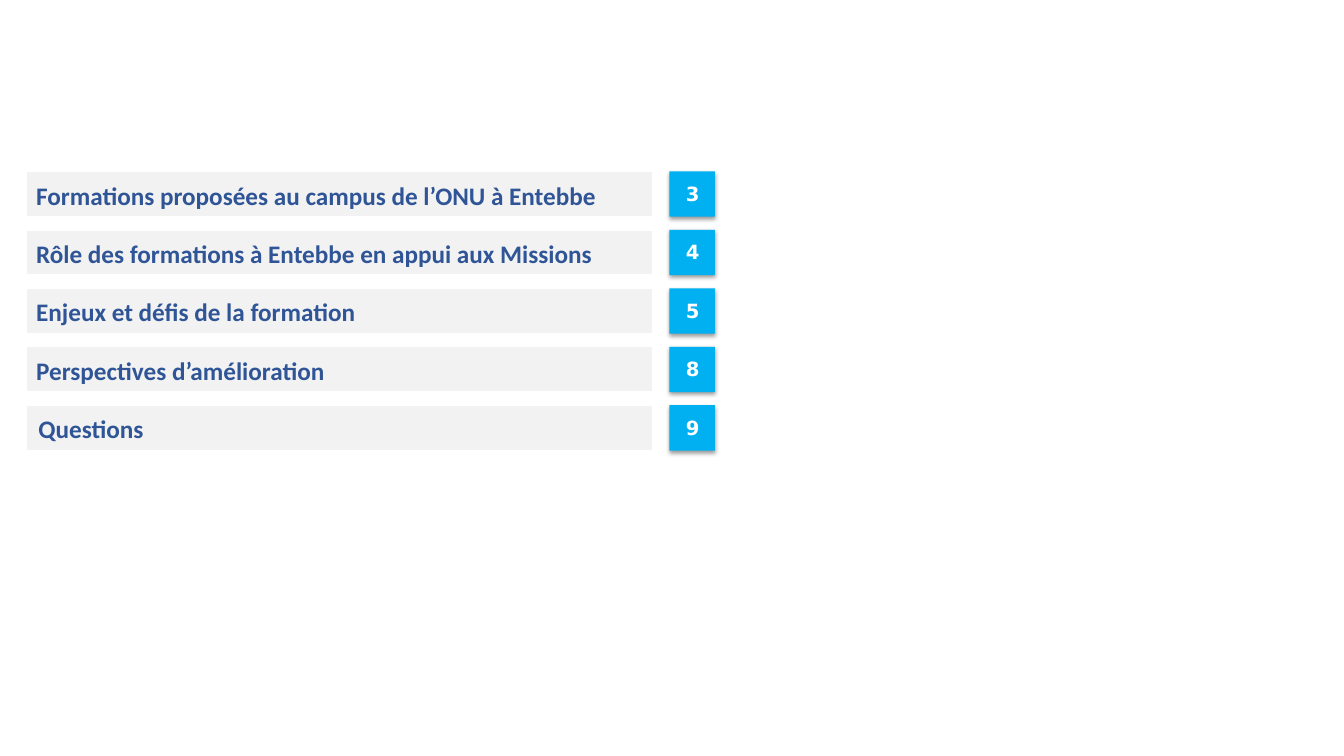
from lxml import etree
from pptx import Presentation
from pptx.dml.color import RGBColor
from pptx.enum import shapes, text
from pptx.oxml import parse_xml
from pptx.oxml.ns import nsdecls
from pptx.util import Inches, Pt

# Content: heading, page, left and right text insets
AGENDA = [
    ("Formations proposées au campus de l’ONU à Entebbe", "3", 0.1, 0.1),
    ("Rôle des formations à Entebbe en appui aux Missions", "4", 0.1, 0.1),
    ("Enjeux et défis de la formation", "5", 0.1, 0.1),
    ("Perspectives d’amélioration", "8", 0.1, 0.1),
    ("Questions", "9", 0.12, 0),
]

THEME = {
    "bar": "F2F2F2", "badge": "00B0F0", "heading": "2F5597", "white": "FFFFFF",
    "heading_font": "Calibri", "heading_size": 18,
    "page_font": "DejaVu Sans", "page_size": 14,
}

# Layout in inches
TOP, PITCH = 1.7, 0.58
BAR_LEFT, BAR_W, ROW_H = 0.26, 6.21, 0.45
BADGE_LEFT = 6.64
PAGE_LEFT, PAGE_DROP, PAGE_W, PAGE_H = 6.72, 0.1, 0.3, 0.24


def color(name):
    return RGBColor.from_string(THEME[name])


def add_rect(parent, left, top, width, height, fill):
    sp = parent.add_shape(shapes.MSO_SHAPE.RECTANGLE, Inches(left), Inches(top),
                          Inches(width), Inches(height))
    sp.shadow.inherit = False
    sp.fill.solid()
    sp.fill.fore_color.rgb = color(fill)
    sp.line.fill.background()
    return sp


def set_text(sp, words, style, ink, align, insets):
    tf = sp.text_frame
    tf.word_wrap = True
    tf.vertical_anchor = text.MSO_ANCHOR.MIDDLE
    (tf.margin_left, tf.margin_top,
     tf.margin_right, tf.margin_bottom) = map(Inches, insets)
    p = tf.paragraphs[0]
    p.text = words
    p.alignment = align
    p.font.name = THEME[style + "_font"]
    p.font.size = Pt(THEME[style + "_size"])
    p.font.bold = True
    p.font.color.rgb = color(ink)
    return p


def add_shadow(sp):
    effects = sp._element.spPr.find("{*}effectLst")
    effects.append(parse_xml(
        f'<a:outerShdw {nsdecls("a")} blurRad="{Pt(3.1)}" dist="{Pt(1.6)}" '
        'dir="5400000" rotWithShape="0"><a:srgbClr val="000000">'
        '<a:alpha val="38000"/></a:srgbClr></a:outerShdw>'))


prs = Presentation()
prs.slide_width, prs.slide_height = Inches(13.33), Inches(7.5)
s = prs.slides.add_slide(prs.slide_layouts[6])

for i, (heading, page, inset_left, inset_right) in enumerate(AGENDA):
    top = TOP + i * PITCH

    # Page badge
    badge = s.shapes.add_group_shape()
    square = add_rect(badge.shapes, BADGE_LEFT, top, ROW_H, ROW_H, "badge")
    add_shadow(square)
    number = add_rect(badge.shapes, PAGE_LEFT, top + PAGE_DROP, PAGE_W, PAGE_H, "badge")
    set_text(number, page, "page", "white", text.PP_ALIGN.CENTER, (0, 0, 0, 0))

    # Heading bar
    bar = add_rect(s.shapes, BAR_LEFT, top, BAR_W, ROW_H, "bar")
    bar.line.color.rgb = color("white")
    bar.line.width = Pt(1)
    p = set_text(bar, heading, "heading", "heading", text.PP_ALIGN.LEFT,
                 (inset_left, 0.08, inset_right, 0.08))
    p.line_spacing = 1.06

prs.save("out.pptx")
